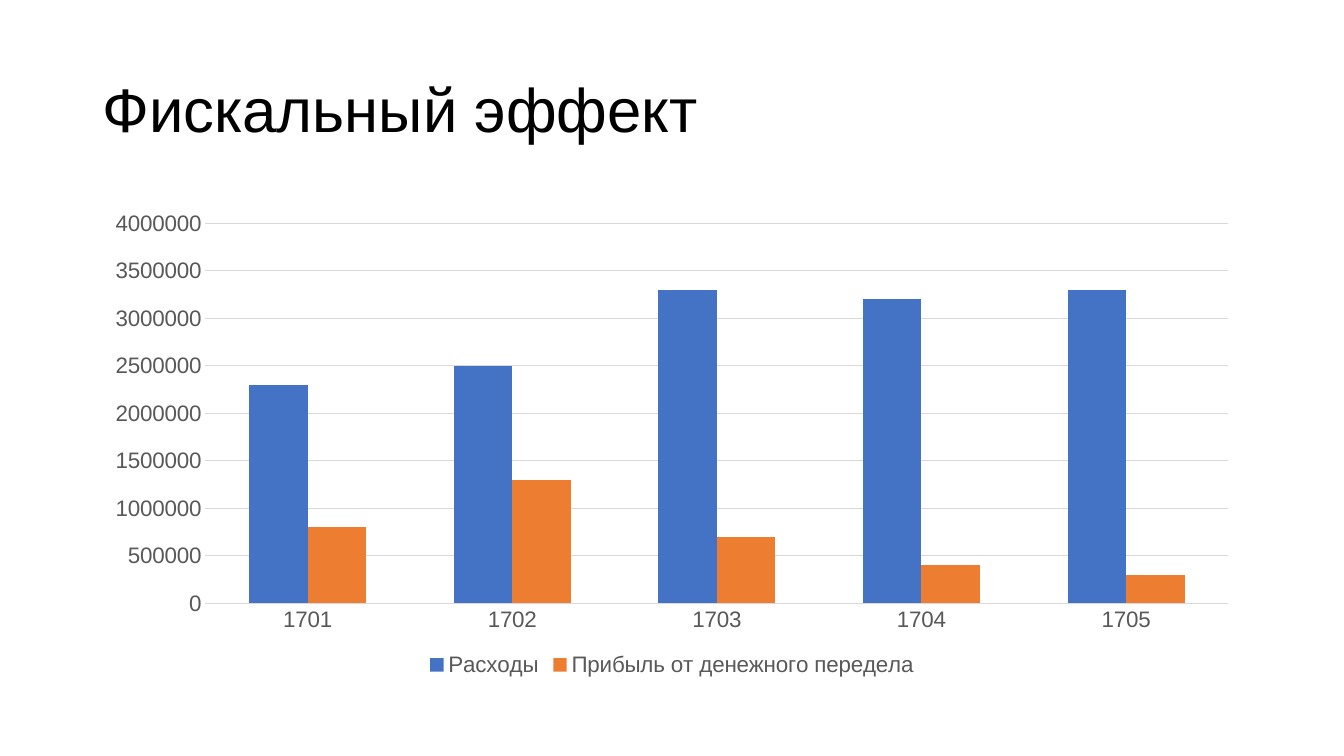
from dataclasses import dataclass

from pptx import Presentation
from pptx.chart.chart import Chart
from pptx.chart.data import CategoryChartData
from pptx.dml.color import RGBColor
from pptx.dml.line import LineFormat
from pptx.enum.chart import XL_CHART_TYPE as ChartType
from pptx.enum.chart import XL_LEGEND_POSITION as LegendPosition
from pptx.enum.chart import XL_TICK_MARK as TickMark
from pptx.enum.text import MSO_ANCHOR as Anchor
from pptx.enum.text import MSO_AUTO_SIZE as AutoSize
from pptx.enum.text import PP_ALIGN as Align
from pptx.slide import Slide
from pptx.text.text import Font
from pptx.util import Emu, Pt

EMU_PER_PX = 9525
FONT_NAME = "Arial"
BLACK = "000000"
LABEL_GREY = "595959"
LINE_GREY = "D9D9D9"
YEARS = ["1701", "1702", "1703", "1704", "1705"]


@dataclass(frozen=True)
class Box:
    left: int
    top: int
    width: int
    height: int

    def emu(self) -> tuple[Emu, Emu, Emu, Emu]:
        return px(self.left), px(self.top), px(self.width), px(self.height)


@dataclass(frozen=True)
class MoneySeries:
    name: str
    color: str
    values: tuple[int, ...]


TITLE_BOX = Box(88, 38, 1104, 139)
CHART_BOX = Box(88, 192, 1104, 457)
MONEY_SERIES = [
    MoneySeries("Расходы", "4472C4", (2300000, 2500000, 3300000, 3200000, 3300000)),
    MoneySeries("Прибыль от денежного передела", "ED7D31",
                (800000, 1300000, 700000, 400000, 300000)),
]


def px(length: int) -> Emu:
    return Emu(length * EMU_PER_PX)


def rgb(color: str) -> RGBColor:
    return RGBColor.from_string(color)


def style_font(font: Font, size: int, color: str) -> None:
    font.name = FONT_NAME
    font.size = Pt(size)
    font.color.rgb = rgb(color)


def style_line(line: LineFormat) -> None:
    line.color.rgb = rgb(LINE_GREY)
    line.width = Pt(0.75)


def add_title(slide: Slide, text: str) -> None:
    shape = slide.shapes.title
    shape.left, shape.top, shape.width, shape.height = TITLE_BOX.emu()
    frame = shape.text_frame
    frame.word_wrap = True
    frame.auto_size = AutoSize.NONE
    frame.vertical_anchor = Anchor.MIDDLE
    paragraph = frame.paragraphs[0]
    paragraph.alignment = Align.LEFT
    paragraph.line_spacing = 0.9
    run = paragraph.add_run()
    run.text = text
    style_font(run.font, 44, BLACK)


def style_axes(chart: Chart) -> None:
    for axis in (chart.category_axis, chart.value_axis):
        axis.major_tick_mark = TickMark.NONE
        axis.minor_tick_mark = TickMark.NONE
        style_font(axis.tick_labels.font, 16, LABEL_GREY)
    style_line(chart.category_axis.format.line)
    value_axis = chart.value_axis
    value_axis.minimum_scale = 0
    value_axis.maximum_scale = 4000000
    value_axis.major_unit = 500000
    value_axis.format.line.fill.background()
    style_line(value_axis.major_gridlines.format.line)


def add_money_chart(slide: Slide) -> None:
    data = CategoryChartData(number_format="General")
    data.categories = YEARS
    for money in MONEY_SERIES:
        data.add_series(money.name, money.values)
    chart = slide.shapes.add_chart(
        ChartType.COLUMN_CLUSTERED, *CHART_BOX.emu(), data
    ).chart
    chart.has_title = False
    style_font(chart.font, 16, BLACK)
    style_axes(chart)
    chart.has_legend = True
    chart.legend.position = LegendPosition.BOTTOM
    chart.legend.include_in_layout = False
    style_font(chart.legend.font, 16, LABEL_GREY)
    plot = chart.plots[0]
    plot.gap_width = 150
    plot.overlap = 0
    plot.vary_by_categories = False
    for series, money in zip(plot.series, MONEY_SERIES):
        series.format.fill.solid()
        series.format.fill.fore_color.rgb = rgb(money.color)


def main() -> None:
    presentation = Presentation()
    presentation.slide_width = px(1280)
    presentation.slide_height = px(720)
    slide = presentation.slides.add_slide(
        presentation.slide_layouts.get_by_name("Title Only")
    )
    add_title(slide, "Фискальный эффект")
    add_money_chart(slide)
    presentation.save("out.pptx")


if __name__ == "__main__":
    main()
